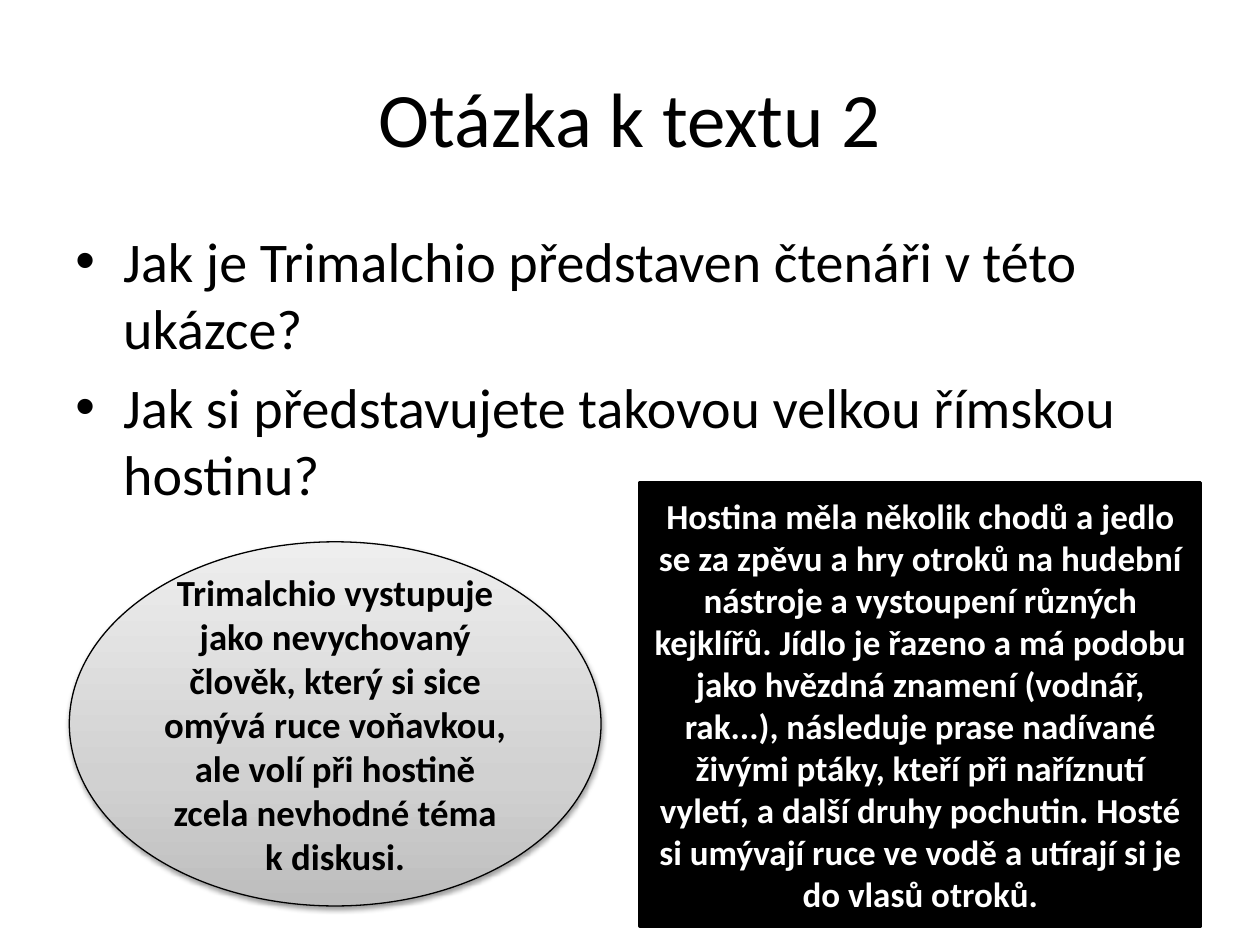
import pptx
import pptx.dml.color
import pptx.enum.shapes
import pptx.enum.text
import pptx.oxml
import pptx.oxml.ns
import pptx.util
from lxml import etree

Inches, Pt = pptx.util.Inches, pptx.util.Pt
SHAPE = pptx.enum.shapes.MSO_SHAPE
ALIGN = pptx.enum.text.PP_ALIGN
ANCHOR = pptx.enum.text.MSO_ANCHOR
NS = pptx.oxml.ns.nsdecls("a")

BLACK = pptx.dml.color.RGBColor(0x00, 0x00, 0x00)
WHITE = pptx.dml.color.RGBColor(0xFF, 0xFF, 0xFF)
GREY_STOPS = {0: "BDBDBD", 35: "D1D1D1", 100: "EEEEEE"}

WIDTH, HEIGHT = Inches(10), Inches(7.5)
MARGIN = WIDTH * 0.05
CONTENT_WIDTH = WIDTH - 2 * MARGIN
INDENT = Inches(0.38)

deck = pptx.Presentation()
deck.slide_width, deck.slide_height = WIDTH, HEIGHT
slide = deck.slides.add_slide(deck.slide_layouts[6])


def write(box, lines, anchor, align, **font):
    """Fill the box with one paragraph per line, all in the same format."""
    frame = box.text_frame
    frame.word_wrap = True
    frame.vertical_anchor = anchor
    frame.text = "\n".join(lines)
    for paragraph in frame.paragraphs:
        paragraph.alignment = align
        for run in paragraph.runs:
            run.font.color.rgb = font["color"]
            for key, value in {"name": "Calibri", "size": Pt(font["size"]),
                               "bold": font.get("bold", False)}.items():
                setattr(run.font, key, value)
    return frame.paragraphs


# Title and questions
title = slide.shapes.add_textbox(int(MARGIN), int(HEIGHT * 0.04),
                                 int(CONTENT_WIDTH), Inches(1.25))
write(title, ["Otázka k textu 2"], ANCHOR.MIDDLE, ALIGN.CENTER, size=44, color=BLACK)

questions = slide.shapes.add_textbox(int(MARGIN), Inches(1.75),
                                     int(CONTENT_WIDTH), int(HEIGHT * 0.66))
question_paragraphs = write(
    questions,
    ["Jak je Trimalchio představen čtenáři v této ukázce?",
     "Jak si představujete takovou velkou římskou hostinu?"],
    ANCHOR.TOP, ALIGN.LEFT, size=32, color=BLACK)
for question in question_paragraphs:
    properties = question._p.get_or_add_pPr()
    properties.set("marL", str(INDENT))
    properties.set("indent", str(-INDENT))
    properties.append(pptx.oxml.parse_xml(f'<a:buFont {NS} typeface="Arial"/>'))
    properties.append(pptx.oxml.parse_xml(f'<a:buChar {NS} char="•"/>'))
question_paragraphs[1].space_before = Pt(6.4)

# Answers
answers = [
    (SHAPE.OVAL, (0.55, 4.3, 4.22, 2.89), 0.75, 21, BLACK,
     "Trimalchio vystupuje jako nevychovaný člověk, který si sice omývá ruce "
     "voňavkou, ale volí při hostině zcela nevhodné téma k\u00a0diskusi."),
    (SHAPE.RECTANGLE, (5.08, 3.83, 4.45, 3.52), 2, 20, WHITE,
     "Hostina měla několik chodů a jedlo se za zpěvu a hry otroků na hudební "
     "nástroje a vystoupení různých kejklířů. Jídlo je řazeno a má podobu jako "
     "hvězdná znamení (vodnář, rak...), následuje prase nadívané živými ptáky, "
     "kteří při naříznutí vyletí, a další druhy pochutin. Hosté si umývají ruce "
     "ve vodě a utírají si je do vlasů otroků."),
]
for kind, place, line_width, size, color, text in answers:
    answer = slide.shapes.add_shape(kind, *map(Inches, place))
    answer.shadow.inherit = False
    answer.line.color.rgb = BLACK
    answer.line.width = Pt(line_width)
    answer.fill.solid()
    answer.fill.fore_color.rgb = BLACK
    write(answer, [text], ANCHOR.MIDDLE, ALIGN.CENTER, size=size, color=color, bold=True)

    if kind == SHAPE.OVAL:
        shape_properties = answer._element.spPr
        stops = "".join(f'<a:gs pos="{share * 1000}"><a:srgbClr val="{grey}"/></a:gs>'
                        for share, grey in GREY_STOPS.items())
        solid = shape_properties.find(pptx.oxml.ns.qn("a:solidFill"))
        shape_properties.replace(solid, pptx.oxml.parse_xml(
            f'<a:gradFill {NS} rotWithShape="1"><a:gsLst>{stops}</a:gsLst>'
            '<a:lin ang="16200000" scaled="0"/></a:gradFill>'))
        shadow = etree.SubElement(
            shape_properties.find(pptx.oxml.ns.qn("a:effectLst")),
            pptx.oxml.ns.qn("a:outerShdw"), blurRad=str(Pt(3.1)),
            dist=str(Pt(1.6)), dir="5400000", rotWithShape="0")
        shade = etree.SubElement(shadow, pptx.oxml.ns.qn("a:srgbClr"), val="000000")
        etree.SubElement(shade, pptx.oxml.ns.qn("a:alpha"), val="38000")

deck.save("out.pptx")
